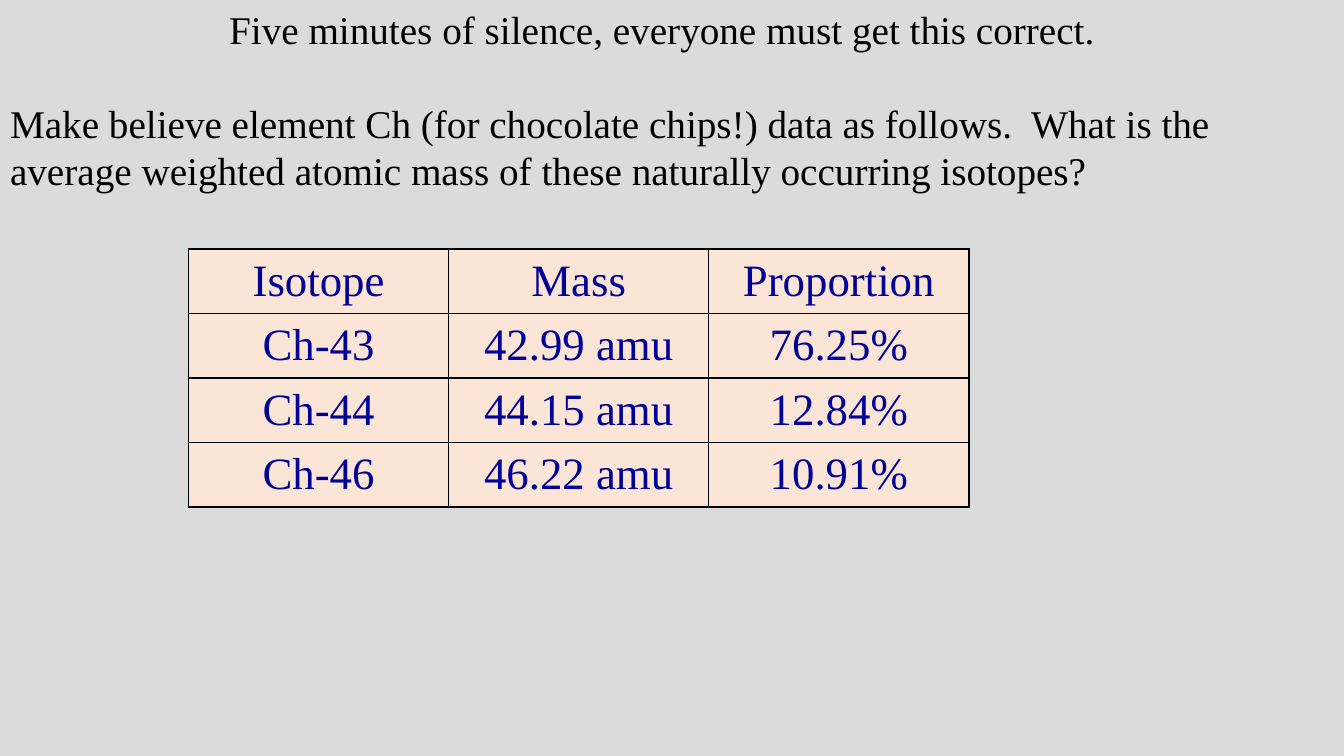
from dataclasses import dataclass

from lxml import etree
from pptx import Presentation
from pptx.dml.color import RGBColor
from pptx.enum import text
from pptx.oxml import ns
from pptx.util import Inches, Pt


@dataclass(frozen=True)
class Theme:
    font: str = "Times New Roman"
    background: RGBColor = RGBColor(0xDB, 0xDB, 0xDB)
    ink: RGBColor = RGBColor(0, 0, 0)
    data_ink: RGBColor = RGBColor(0, 0, 0x99)
    cell: RGBColor = RGBColor(0xFB, 0xE5, 0xD6)
    prompt_size: Pt = Pt(28)
    data_size: Pt = Pt(32)
    border: Pt = Pt(1)


THEME = Theme()
INSTRUCTION = "Five minutes of silence, everyone must get this correct."
QUESTION = (
    "Make believe element Ch (for chocolate chips!) data as follows.  What is the "
    "average weighted atomic mass of these naturally occurring isotopes?"
)
ISOTOPES = [
    ("Isotope", "Mass", "Proportion"),
    ("Ch-43", "42.99 amu", "76.25%"),
    ("Ch-44", "44.15 amu", "12.84%"),
    ("Ch-46", "46.22 amu", "10.91%"),
]


def apply_format(target, values):
    for name, value in values.items():
        setattr(target, name, value)


def write_paragraph(paragraph, wording, alignment, size, color):
    run = paragraph.add_run()
    run.text = wording
    paragraph.alignment = alignment
    apply_format(run.font, {"name": THEME.font, "size": size})
    run.font.color.rgb = color


def add_prompt(slide):
    prompt = slide.shapes.title
    apply_format(prompt, {
        "left": Inches(0), "top": Inches(0),
        "width": Inches(13.33), "height": Inches(1.99),
    })
    frame = prompt.text_frame
    apply_format(frame, {
        "word_wrap": True,
        "auto_size": text.MSO_AUTO_SIZE.SHAPE_TO_FIT_TEXT,
        "vertical_anchor": text.MSO_ANCHOR.TOP,
    })
    instruction = frame.paragraphs[0]
    question = frame.add_paragraph()
    write_paragraph(instruction, INSTRUCTION, text.PP_ALIGN.CENTER,
                    THEME.prompt_size, THEME.ink)
    write_paragraph(question, QUESTION, text.PP_ALIGN.LEFT,
                    THEME.prompt_size, THEME.ink)
    instruction._p.get_or_add_pPr().set("marR", str(Inches(0.2)))
    question.space_before = Pt(33.6)


def add_borders(cell):
    properties = cell._tc.get_or_add_tcPr()
    for position, side in enumerate(("lnL", "lnR", "lnT", "lnB")):
        line = etree.Element(ns.qn(f"a:{side}"), w=str(THEME.border))
        fill = etree.SubElement(line, ns.qn("a:solidFill"))
        etree.SubElement(fill, ns.qn("a:srgbClr"), val=str(THEME.ink))
        properties.insert(position, line)


def add_isotope_table(slide):
    column_width, row_height = Inches(2.58), Inches(0.64)
    isotope_table = slide.shapes.add_table(
        len(ISOTOPES), len(ISOTOPES[0]), Inches(1.87), Inches(2.47),
        column_width * len(ISOTOPES[0]), row_height * len(ISOTOPES),
    ).table
    for column in isotope_table.columns:
        column.width = column_width
    for row, values in zip(isotope_table.rows, ISOTOPES):
        row.height = row_height
        for cell, value in zip(row.cells, values):
            cell.vertical_anchor = text.MSO_ANCHOR.MIDDLE
            cell.fill.solid()
            cell.fill.fore_color.rgb = THEME.cell
            write_paragraph(cell.text_frame.paragraphs[0], value,
                            text.PP_ALIGN.CENTER, THEME.data_size, THEME.data_ink)
            add_borders(cell)


def main():
    deck = Presentation()
    apply_format(deck, {"slide_width": Inches(13.33), "slide_height": Inches(7.5)})
    slide = deck.slides.add_slide(deck.slide_layouts[5])
    slide.background.fill.solid()
    slide.background.fill.fore_color.rgb = THEME.background
    add_prompt(slide)
    add_isotope_table(slide)
    deck.save("out.pptx")


if __name__ == "__main__":
    main()
